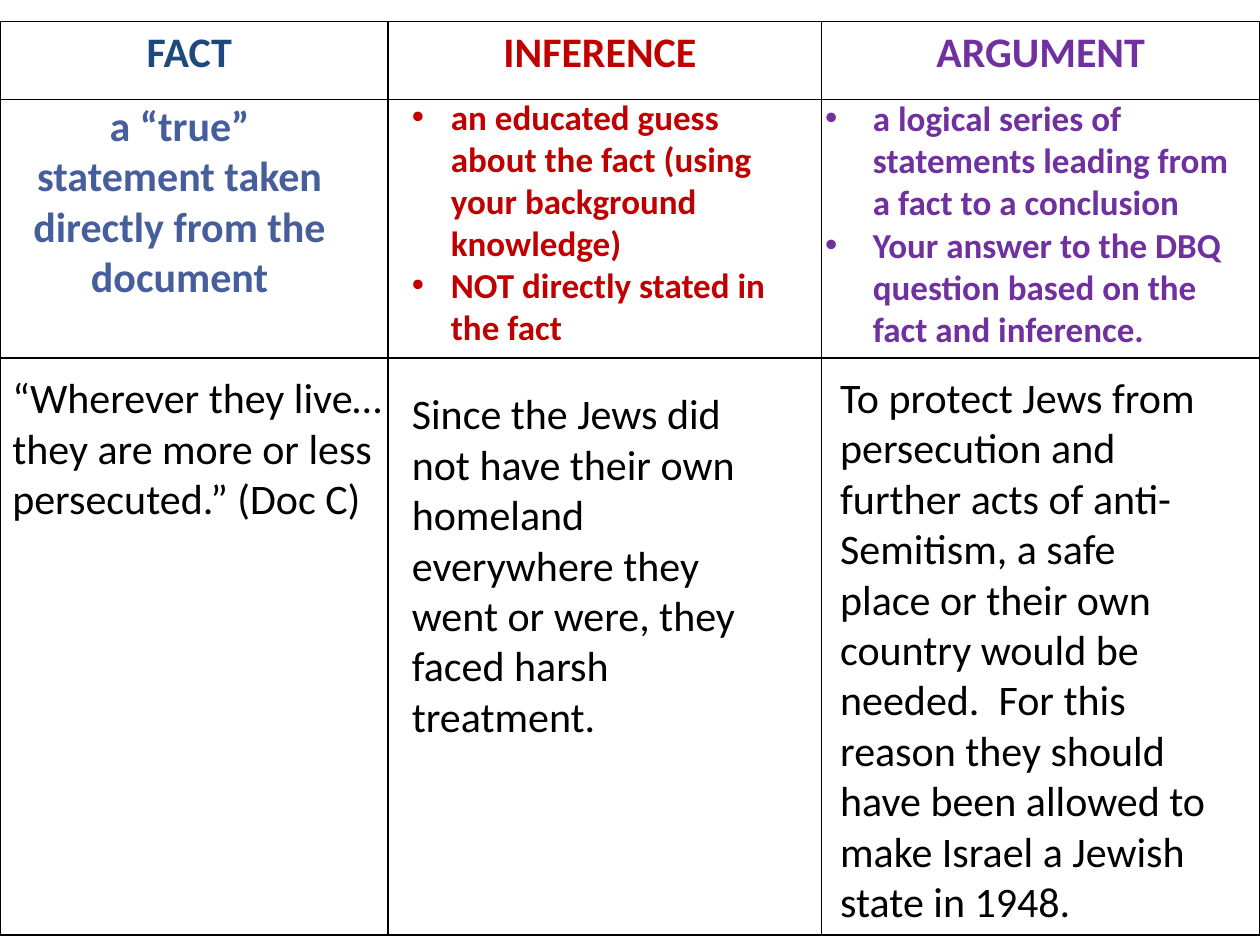
import pptx
import pptx.dml.color
import pptx.enum.text
import pptx.util
from lxml import etree
from pptx.oxml.ns import qn

RGBColor = pptx.dml.color.RGBColor
Inches, Pt = pptx.util.Inches, pptx.util.Pt
CENTER = pptx.enum.text.PP_ALIGN.CENTER
LEFT = pptx.enum.text.PP_ALIGN.LEFT

NAVY = RGBColor(0x1F, 0x49, 0x7D)
SLATE = RGBColor(0x46, 0x5E, 0x9C)
RED = RGBColor(0xC0, 0x00, 0x00)
PURPLE = RGBColor(0x70, 0x30, 0xA0)
BLACK = RGBColor(0x00, 0x00, 0x00)

FONT = "Calibri"
GRID_TOP = 0.17
COLUMNS = [3.08, 3.44, 3.48]
ROWS = [0.62, 2.05, 4.58]

HEADINGS = [("FACT ", NAVY), ("INFERENCE ", RED), ("ARGUMENT", PURPLE)]

# Each entry: offset from its grid cell, size, paragraphs, style
DEFINITIONS = [
    ((0.12, -0.05), (2.61, 1.72),
     ["a “true” statement taken directly from the document"],
     dict(size=24, color=SLATE, bold=True, align=CENTER)),
    ((0.09, -0.08), (3.28, 2.12),
     ["an educated guess about the fact (using your background knowledge)",
      "NOT directly stated in the fact"],
     dict(size=20, color=RED, bold=True, indent=0.31)),
    ((-0.07, -0.07), (3.4, 2.12),
     ["a logical series of statements leading from a fact to a conclusion",
      "Your answer to the DBQ question based on the fact and inference."],
     dict(size=20, color=PURPLE, bold=True, indent=0.38)),
]
EXAMPLES = [
    ((0, 0.06), (3.17, 1.72),
     ["“Wherever they live…they are more or less persecuted.” (Doc C)"],
     dict(size=24, color=BLACK)),
    ((0.09, 0.19), (3.18, 2.93),
     ["Since the Jews did not have their own homeland everywhere they went "
      "or were, they faced harsh treatment."],
     dict(size=24, color=BLACK)),
    ((0.05, 0.06), (3.17, 4.54),
     ["To protect Jews from persecution and further acts of anti-Semitism, "
      "a safe place or their own country would be needed.  For this reason "
      "they should have been allowed to make Israel a Jewish state in 1948."],
     dict(size=24, color=BLACK)),
]


def style_paragraph(paragraph, size, color, bold=False, align=LEFT, indent=0):
    paragraph.alignment = align
    font = paragraph.font
    font.name, font.size, font.bold = FONT, Pt(size), bold
    font.color.rgb = color
    if indent:
        properties = paragraph._p.get_or_add_pPr()
        properties.set("marL", str(Inches(indent)))
        properties.set("indent", str(-Inches(indent)))
        # Bullet elements come before the default run properties
        bullet_font = etree.Element(qn("a:buFont"), typeface="Arial")
        bullet = etree.Element(qn("a:buChar"), char="•")
        properties.insert(0, bullet_font)
        properties.insert(1, bullet)


def outline_cell(cell):
    cell.fill.background()
    properties = cell._tc.get_or_add_tcPr()
    for position, side in enumerate(("a:lnL", "a:lnR", "a:lnT", "a:lnB")):
        border = etree.Element(qn(side), w=str(Pt(1)))
        fill = etree.SubElement(border, qn("a:solidFill"))
        etree.SubElement(fill, qn("a:srgbClr"), val=str(BLACK))
        properties.insert(position, border)


def add_grid(slide, left, top):
    """Outlined table whose first row carries the headings."""
    table = slide.shapes.add_table(
        len(ROWS), len(COLUMNS), Inches(left), Inches(top),
        Inches(sum(COLUMNS)), Inches(sum(ROWS))).table
    table.first_row = table.horz_banding = False
    for column, width in zip(table.columns, COLUMNS):
        column.width = Inches(width)
    for row, height in zip(table.rows, ROWS):
        row.height = Inches(height)
    for cell in table.iter_cells():
        outline_cell(cell)
    for index, (heading, color) in enumerate(HEADINGS):
        cell = table.cell(0, index)
        cell.text = heading
        style_paragraph(cell.text_frame.paragraphs[0], 24, color, True, CENTER)


def add_row_texts(slide, row, entries):
    """Text boxes laid over one row of the grid."""
    row_top = GRID_TOP + sum(ROWS[:row])
    for column, ((dx, dy), (width, height), lines, style) in enumerate(entries):
        frame = slide.shapes.add_textbox(
            Inches(sum(COLUMNS[:column]) + dx), Inches(row_top + dy),
            Inches(width), Inches(height)).text_frame
        frame.word_wrap = True
        frame.auto_size = pptx.enum.text.MSO_AUTO_SIZE.SHAPE_TO_FIT_TEXT
        frame.text = "\n".join(lines)
        for paragraph in frame.paragraphs:
            style_paragraph(paragraph, **style)


def main():
    presentation = pptx.Presentation()
    presentation.slide_width = Inches(10)
    presentation.slide_height = Inches(7.5)
    slide = presentation.slides.add_slide(presentation.slide_layouts[6])

    add_grid(slide, 0, GRID_TOP)
    add_row_texts(slide, 1, DEFINITIONS)
    add_row_texts(slide, 2, EXAMPLES)
    presentation.save("out.pptx")


if __name__ == "__main__":
    main()
